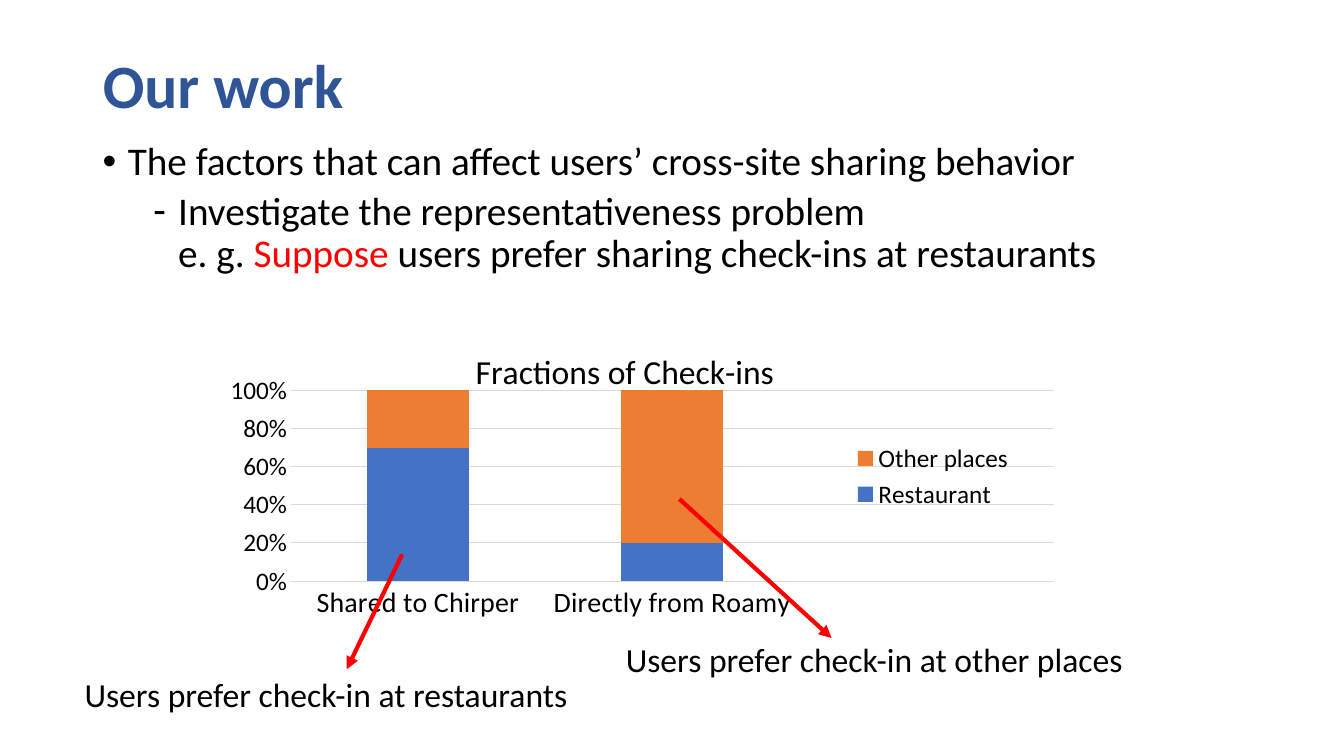
from lxml import etree
from pptx import Presentation, util as u
from pptx.chart import data as chart_data
from pptx.dml.color import RGBColor
from pptx.enum import chart as ec, shapes, text
from pptx.oxml import parse_xml
from pptx.oxml.ns import nsdecls, qn

BLUE = RGBColor(0x2F, 0x55, 0x97)
BLACK = RGBColor(0, 0, 0)
RED = RGBColor(0xFF, 0, 0)
GREY = RGBColor(0xD9, 0xD9, 0xD9)
RESTAURANT = RGBColor(0x44, 0x72, 0xC4)
OTHER = RGBColor(0xED, 0x7D, 0x31)


class SlideBuilder:
    """Holds the text style and the current slide, and adds elements to it."""

    def __init__(self, deck):
        self.style = {"name": "Calibri", "bold": False}
        self.page = deck.slides.add_slide(deck.slide_layouts[5])

    def format_font(self, font, size, color=BLACK, **extra):
        for name, value in {**self.style, "size": u.Pt(size), **extra}.items():
            setattr(font, name, value)
        font.color.rgb = color

    def place(self, shape, *bounds):
        for name, value in zip(("left", "top", "width", "height"), bounds):
            setattr(shape, name, u.Pt(value))

    def title(self, words, *bounds):
        box = self.page.shapes.title
        self.place(box, *bounds)
        frame = box.text_frame
        frame.text = words
        frame.vertical_anchor = text.MSO_ANCHOR.MIDDLE
        para = frame.paragraphs[0]
        para.alignment = text.PP_ALIGN.LEFT
        para.line_spacing = 0.9
        self.format_font(para.runs[0].font, 44, BLUE, bold=True)

    def text_box(self, *bounds):
        box = self.page.shapes.add_textbox(*map(u.Pt, bounds))
        box.text_frame.word_wrap = True
        return box.text_frame

    def bullet(self, para, mark, margin, lines, before=0):
        props = para._p.get_or_add_pPr()
        props.set("marL", str(u.Pt(margin)))
        props.set("indent", str(u.Pt(-18)))
        para.line_spacing = 0.9
        para.space_before = u.Pt(before)
        etree.SubElement(props, qn("a:buFont")).set("typeface", "Arial")
        etree.SubElement(props, qn("a:buChar")).set("char", mark)
        for index, line in enumerate(lines):
            if index:
                para.add_line_break()
            for words, color in line:
                span = para.add_run()
                span.text = words
                self.format_font(span.font, 28, color)

    def label(self, words, *bounds):
        frame = self.text_box(*bounds)
        frame.auto_size = text.MSO_AUTO_SIZE.SHAPE_TO_FIT_TEXT
        span = frame.paragraphs[0].add_run()
        span.text = words
        self.format_font(span.font, 24)

    def arrow(self, *ends):
        line = self.page.shapes.add_connector(
            shapes.MSO_CONNECTOR.STRAIGHT, *map(u.Pt, ends))
        line.line.color.rgb = RED
        line.line.width = u.Pt(3)
        etree.SubElement(line.line._get_or_add_ln(), qn("a:tailEnd")).set("type", "triangle")
        etree.SubElement(line._element.spPr, qn("a:effectLst"))

    def manual_layout(self, parent, index, inner=False, **fractions):
        for old in parent.findall(qn("c:layout")):
            parent.remove(old)
        target = '<c:layoutTarget val="inner"/>' if inner else ""
        modes = '<c:xMode val="edge"/><c:yMode val="edge"/>'
        values = "".join(f'<c:{key} val="{value}"/>' for key, value in fractions.items())
        parent.insert(index, parse_xml(
            f'<c:layout {nsdecls("c")}><c:manualLayout>{target}{modes}{values}'
            "</c:manualLayout></c:layout>"))

    def stacked_chart(self, heading, categories, series, *bounds):
        data = chart_data.CategoryChartData()
        data.categories = categories
        for name, values, _ in series:
            data.add_series(name, values)
        chart = self.page.shapes.add_chart(
            ec.XL_CHART_TYPE.COLUMN_STACKED_100, *map(u.Pt, bounds), data).chart
        self.format_font(chart.font, 10)

        chart.has_title = True
        title = chart.chart_title
        title.text_frame.text = heading
        self.format_font(title.text_frame.paragraphs[0].runs[0].font, 24)
        self.manual_layout(title._element, 1, x=0.29, y=0.07)

        plot = chart.plots[0]
        plot.gap_width, plot.overlap = 150, 100
        plot.vary_by_categories = False
        for item, (_, _, color) in zip(plot.series, series):
            item.format.fill.solid()
            item.format.fill.fore_color.rgb = color
        self.manual_layout(chart._chartSpace.chart.plotArea, 0, inner=True,
                           x=0.105, y=0.205, w=0.79, h=0.544)

        for axis, size in ((chart.category_axis, 20), (chart.value_axis, 18)):
            axis.major_tick_mark = axis.minor_tick_mark = ec.XL_TICK_MARK.NONE
            self.format_font(axis.tick_labels.font, size)
        scale = chart.value_axis
        scale.minimum_scale, scale.maximum_scale, scale.major_unit = 0, 1, 0.2
        scale.tick_labels.number_format = "0%"
        scale.tick_labels.number_format_is_linked = False
        scale.format.line.fill.background()
        for line in (chart.category_axis.format.line, scale.major_gridlines.format.line):
            line.color.rgb = GREY
            line.width = u.Pt(0.75)

        chart.has_legend = True
        legend = chart.legend
        legend.position = ec.XL_LEGEND_POSITION.RIGHT
        legend.include_in_layout = True
        self.format_font(legend.font, 18)
        self.manual_layout(legend._element, 1, x=0.68, y=0.34, w=0.18, h=0.22)


def main():
    deck = Presentation()
    deck.slide_width, deck.slide_height = u.Pt(960), u.Pt(540)
    slide = SlideBuilder(deck)
    slide.title("Our work", 66.24, 28.8, 828, 69.12)

    body = slide.text_box(66.24, 97.92, 828, 388.8)
    slide.bullet(body.paragraphs[0], "•", 18, [
        [("The factors that can affect users’ cross-site sharing behavior", BLACK)]])
    slide.bullet(body.add_paragraph(), "-", 54, [
        [("Investigate the representativeness problem", BLACK)],
        [("e. g. ", BLACK), ("Suppose", RED),
         (" users prefer sharing check-ins at restaurants", BLACK)]], before=5)

    slide.stacked_chart(
        "Fractions of Check-ins",
        ["Shared to Chirper", "Directly from Roamy", " "],
        [("Restaurant", (70, 20, None), RESTAURANT),
         ("Other places", (30, 80, None), OTHER)],
        135.36, 227.52, 689.76, 250.56)

    slide.arrow(287.28, 396, 247.68, 478.08)
    slide.label("Users prefer check-in at restaurants", 53.28, 478.08, 452.88, 36)
    slide.arrow(485.28, 356.4, 594, 455.76)
    slide.label("Users prefer check-in at other places", 439.92, 452.88, 473.76, 36)
    deck.save("out.pptx")


if __name__ == "__main__":
    main()
